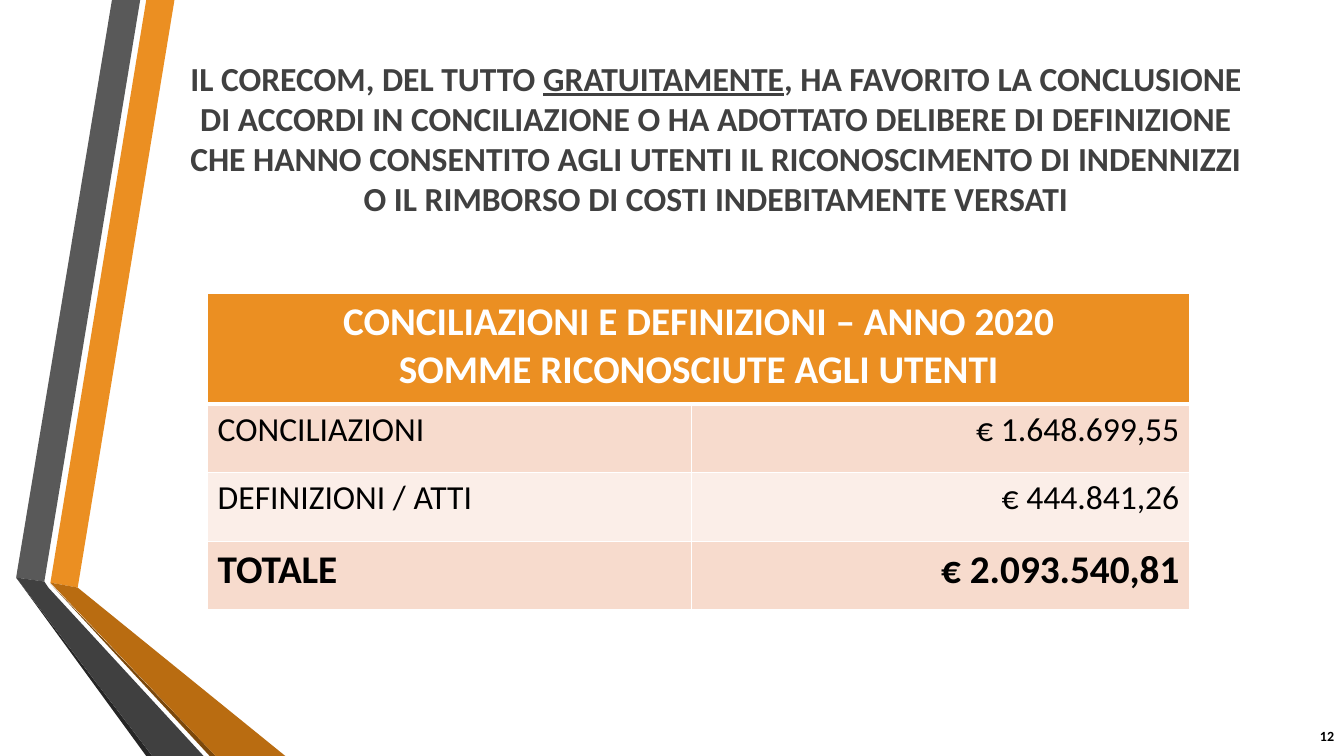
"""Build the slide on sums awarded to users, with lengths in percent of the slide."""
from dataclasses import dataclass

from lxml import etree
from pptx import Presentation
from pptx import util as u
from pptx.dml.color import RGBColor
from pptx.enum import text
from pptx.oxml import ns

WIDE, HIGH = u.Inches(13.33), u.Inches(7.5)
ALIGN = text.PP_ALIGN
DARK, ORANGE, WHITE, BLACK = "404040", "EB8F22", "FFFFFF", "000000"
PEACH, PALE = "F7DBCD", "FBEEE8"


@dataclass
class Band:
    fill: str
    points: list[tuple[float, float]]


@dataclass
class Style:
    size: int
    color: str = BLACK
    bold: bool = True
    align: ALIGN = ALIGN.LEFT


@dataclass
class Row:
    label: str
    value: str
    fill: str
    size: int
    bold: bool


BANDS = [
    Band(ORANGE, [(3.75, 77.07), (5.78, 77.73), (12.98, 0), (10.88, 0)]),
    Band("595959", [(10.43, 0), (8.33, 0), (1.2, 76.4), (3.3, 76.93)]),
    Band("262626", [(1.2, 76.4), (10.88, 100), (11.33, 100)]),
    Band("7B480B", [(3.75, 77.2), (15.6, 100), (16.05, 100)]),
    Band("B96C11", [(3.75, 77.07), (16.05, 100), (21.23, 100), (5.78, 77.73)]),
    Band(DARK, [(1.2, 76.4), (11.33, 100), (15.15, 100), (3.6, 77.73), (3.3, 76.93)]),
]
TITLE = [
    ("IL CORECOM, DEL TUTTO ", False),
    ("GRATUITAMENTE", True),
    (", HA FAVORITO LA CONCLUSIONE DI ACCORDI IN CONCILIAZIONE O HA ADOTTATO "
     "DELIBERE DI DEFINIZIONE CHE HANNO CONSENTITO AGLI UTENTI IL RICONOSCIMENTO "
     "DI INDENNIZZI O IL RIMBORSO DI COSTI INDEBITAMENTE VERSATI", False),
]
HEAD = ["CONCILIAZIONI E DEFINIZIONI – ANNO 2020", "SOMME RICONOSCIUTE AGLI UTENTI"]
ROWS = [
    Row("CONCILIAZIONI", "€ 1.648.699,55", PEACH, 24, False),
    Row("DEFINIZIONI / ATTI", "€ 444.841,26", PALE, 24, False),
    Row("TOTALE", "€ 2.093.540,81", PEACH, 28, True),
]


def across(share: float) -> int:
    return round(WIDE * share / 100)


def down(share: float) -> int:
    return round(HIGH * share / 100)


def frame(x: float, y: float, w: float, h: float) -> tuple[int, int, int, int]:
    return across(x), down(y), across(w), down(h)


def tint(target, color: str) -> None:
    target.rgb = RGBColor.from_string(color)


def paint(fill, color: str) -> None:
    fill.solid()
    tint(fill.fore_color, color)


def write(para, words: str, style: Style, under: bool = False) -> None:
    para.alignment = style.align
    run = para.add_run()
    run.text = words
    font = run.font
    font.name, font.size = "Calibri", u.Pt(style.size)
    font.bold, font.underline = style.bold, under
    tint(font.color, style.color)


def draw_band(slide, band: Band) -> None:
    first, *rest = [(across(x), down(y)) for x, y in band.points]
    pen = slide.shapes.build_freeform(*first)
    pen.add_line_segments(rest, close=True)
    shape = pen.convert_to_shape()
    shape.shadow.inherit = False
    paint(shape.fill, band.fill)
    shape.line.fill.background()


def draw_title(slide) -> None:
    title = slide.shapes.title
    title.left, title.top, title.width, title.height = frame(12.68, 6.93, 81.17, 28.27)
    body = title.text_frame
    body.word_wrap = True
    body.auto_size = text.MSO_AUTO_SIZE.NONE
    body.vertical_anchor = text.MSO_ANCHOR.TOP
    for words, under in TITLE:
        write(body.paragraphs[0], words, Style(24, DARK, align=ALIGN.CENTER), under)


def draw_number(slide) -> None:
    body = slide.shapes.add_textbox(*frame(95.5, 94.67, 4.5, 5.33)).text_frame
    body.word_wrap = True
    body.vertical_anchor = text.MSO_ANCHOR.MIDDLE
    write(body.paragraphs[0], "12", Style(10, align=ALIGN.RIGHT))


def edge(cell, row: int) -> None:
    props = cell._tc.get_or_add_tcPr()
    thick = {"T": 3 if row == 1 else 1, "B": 3 if row == 0 else 1}
    for side in "LRTB":
        width = u.Pt(thick.get(side, 1))
        line = etree.SubElement(props, ns.qn(f"a:ln{side}"), w=str(width))
        solid = etree.SubElement(line, ns.qn("a:solidFill"))
        etree.SubElement(solid, ns.qn("a:srgbClr"), val=WHITE)


def draw_table(slide) -> None:
    cols, rows = (36, 37.06), (14.67, 9.07, 9.07, 9.07)
    box = frame(15.45, 38.8, sum(cols), sum(rows))
    table = slide.shapes.add_table(len(rows), len(cols), *box).table
    for col, share in zip(table.columns, cols):
        col.width = across(share)
    fills = [ORANGE] + [row.fill for row in ROWS]
    for i, (line, share) in enumerate(zip(table.rows, rows)):
        line.height = down(share)
        for cell in line.cells:
            edge(cell, i)
            paint(cell.fill, fills[i])
    head = table.cell(0, 0)
    head.merge(table.cell(0, 1))
    body = head.text_frame
    for para, words in zip((body.paragraphs[0], body.add_paragraph()), HEAD):
        write(para, words, Style(28, WHITE, align=ALIGN.CENTER))
    for i, row in enumerate(ROWS, 1):
        pairs = ((row.label, ALIGN.LEFT), (row.value, ALIGN.RIGHT))
        for j, (words, align) in enumerate(pairs):
            para = table.cell(i, j).text_frame.paragraphs[0]
            write(para, words, Style(row.size, BLACK, row.bold, align))


def main() -> None:
    deck = Presentation()
    deck.slide_width, deck.slide_height = WIDE, HIGH
    slide = deck.slides.add_slide(deck.slide_layouts[5])
    paint(slide.background.fill, WHITE)
    for band in BANDS:
        draw_band(slide, band)
    draw_title(slide)
    draw_number(slide)
    draw_table(slide)
    deck.save("out.pptx")


if __name__ == "__main__":
    main()
